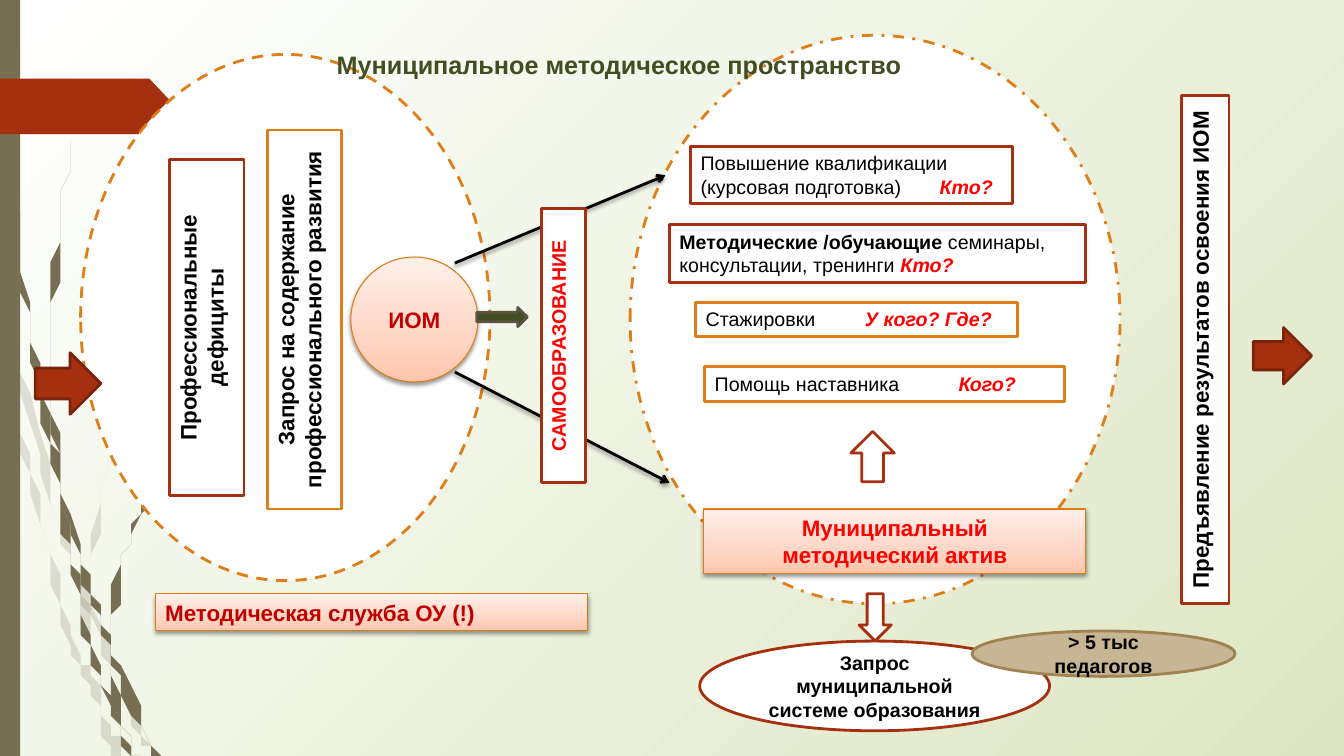
import copy

import lxml.etree
import pptx
import pptx.dml.color
import pptx.enum.dml
import pptx.enum.shapes
import pptx.enum.text
import pptx.oxml
import pptx.oxml.ns
import pptx.util

KIND = pptx.enum.shapes.MSO_SHAPE
DASH = pptx.enum.dml.MSO_LINE
LEFT, CENTER = pptx.enum.text.PP_ALIGN.LEFT, pptx.enum.text.PP_ALIGN.CENTER
TOP, MIDDLE = pptx.enum.text.MSO_ANCHOR.TOP, pptx.enum.text.MSO_ANCHOR.MIDDLE
qn = pptx.oxml.ns.qn


def rgb(code):
    return pptx.dml.color.RGBColor.from_string(code)


def smooth(knots, steps=6):
    """Points of a soft curve through all knots."""
    ends = [knots[0], *knots, knots[-1]]
    curve = []
    for a, b, c, d in zip(ends, ends[1:], ends[2:], ends[3:]):
        for step in range(steps):
            t = step / steps
            curve.append(tuple(
                (2 * q + (r - p) * t + (2 * p - 5 * q + 4 * r - s) * t ** 2
                 + (3 * q - p - 3 * r + s) * t ** 3) / 2
                for p, q, r, s in zip(a, b, c, d)))
    return curve + [knots[-1]]


# Slide: a grid of 75 rows of square cells
deck = pptx.Presentation()
deck.slide_width, deck.slide_height = pptx.util.Inches(13.33), pptx.util.Inches(7.5)
CELL = deck.slide_height / 75
slide = deck.slides.add_slide(deck.slide_layouts[6])
shapes = slide.shapes

RUST, ORANGE, OLIVE, TAUPE = "A53010", "DE7E18", "424D22", "766F54"
WHITE, BLACK, RED, CRIMSON = "FFFFFF", "000000", "FF0000", "C00000"
PEACH = [(0, "FFC6AD"), (0.35, "FFD6C5"), (1, "FFEFE9")]
soft_shadow = pptx.oxml.parse_xml(
    '<a:outerShdw xmlns:a="http://schemas.openxmlformats.org/drawingml/2006/main" '
    'blurRad="39370" dist="20320" dir="5400000" rotWithShape="0">'
    '<a:srgbClr val="000000"><a:alpha val="38000"/></a:srgbClr></a:outerShdw>')

# Background glow from the top left corner
glow = slide.background.fill
glow.gradient()
for stop, (position, code) in zip(glow.gradient_stops, [(0, WHITE), (1, "DDE6C3")]):
    stop.position, stop.color.rgb = position, rgb(code)
glow_xml = slide.element.find(".//" + qn("a:gradFill"))
glow_xml.remove(glow_xml.find(qn("a:lin")))
focus = lxml.etree.SubElement(glow_xml, qn("a:path"), path="circle")
lxml.etree.SubElement(focus, qn("a:fillToRect"), r="100000", b="100000")

# Grass blades: left edge and right edge, each from top to bottom, and opacity
blades = [
    ([(0, 28.2), (1.1, 35), (2.8, 47), (6.5, 62.1), (9.2, 69.3), (11.4, 75)],
     [(0, 29.9), (1.7, 37.6), (3.1, 46.9), (7, 61.9), (9.3, 68.3), (11.9, 75)], 20),
    ([(1.4, 34.5), (1.7, 37.6), (5.8, 52.2), (8.4, 59.9), (12.3, 69.4), (15, 75)],
     [(1.4, 34.5), (6.2, 52), (8.5, 58.6), (12.7, 69.2), (15.5, 75)], 20),
    ([(31.2, 15.3), (26.8, 19.7), (22.8, 24.4), (15.8, 34.8), (10.7, 46.1),
      (8.5, 58.4), (8.7, 64.6), (9.6, 69.2), (11.9, 75)],
     [(31.2, 15.4), (26.8, 19.8), (22.9, 24.5), (16, 34.9), (11, 46.2),
      (8.8, 58.4), (9.1, 64.6), (10.5, 71.1), (12.4, 75)], 20),
    ([(0.3, 0), (0.7, 11), (1.7, 23.3), (3.3, 35.5), (5.6, 47.7), (6.8, 55.7),
      (9.3, 65.9), (11.7, 72.2), (12.7, 75)],
     [(0.4, 0), (0.8, 10.9), (1.9, 23.2), (3.6, 35.5), (5.5, 45.3), (7.2, 55.6),
      (9.8, 65.7), (11.6, 70.6), (13.1, 75)], 100),
    ([(7, 14.1), (5.6, 24.5), (5.2, 34.9), (5.5, 44.9), (6.4, 50.5), (8.8, 59.2),
      (11.1, 65.6), (15.2, 75)],
     [(7, 14.1), (5.8, 24.5), (5.4, 34.9), (6, 47.2), (9.3, 59), (11.3, 64.9),
      (15.7, 75)], 100),
    ([(26, 34.4), (20.4, 40.5), (15.6, 47.4), (12.2, 55.1), (10.6, 63.1),
      (11, 69.1), (13.3, 75)],
     [(26.1, 34.4), (20.5, 40.6), (15.8, 47.6), (12.5, 55.2), (11.1, 63.3),
      (11.1, 65.6), (12.1, 71.6), (13.6, 75)], 100),
]
for left_edge, right_edge, opacity in blades:
    outline = smooth(left_edge) + smooth(right_edge)[::-1]
    builder = shapes.build_freeform(*outline[0], scale=CELL)
    builder.add_line_segments(outline[1:])
    blade = builder.convert_to_shape()
    blade.shadow.inherit = False
    blade.fill.solid()
    blade.fill.fore_color.rgb = rgb(TAUPE)
    blade.line.fill.background()
    tint = blade.element.spPr.find(".//" + qn("a:srgbClr"))
    lxml.etree.SubElement(tint, qn("a:alpha"), val=str(opacity * 1000))

# Text formats
heading = {"size": pptx.util.Pt(16), "bold": True, "color": BLACK}
alert = {**heading, "color": RED}
accent = {**heading, "color": CRIMSON}
small = {**heading, "size": pptx.util.Pt(14)}
small_alert = {**small, "color": RED}
plain = {**small, "bold": False}
question = {**small_alert, "italic": True}
title = {**heading, "size": pptx.util.Pt(18), "color": OLIVE}

# Parts from back to front: kind, place in cells, fill, line, then options
parts = [
    (KIND.RECTANGLE, (0, 0, 2, 75), TAUPE, None, {}),
    (KIND.PENTAGON, (0, 7.8, 17.4, 5.5), RUST, None, {"adjust": 0.47}),
    (KIND.OVAL, (8, 5.4, 40.6, 52.2), WHITE, ORANGE, {"dash": DASH.DASH}),
    (KIND.OVAL, (62.5, 3.5, 48.6, 56.4), WHITE, ORANGE, {"dash": DASH.DASH_DOT}),
    # Individual route and its inputs
    (KIND.RECTANGLE, (16.8, 15.8, 7.4, 33.4), WHITE, RUST,
     {"turned": True, "text": [[("Профессиональные дефициты", heading)]]}),
    (KIND.RECTANGLE, (26.5, 12.9, 7.4, 37.6), WHITE, ORANGE,
     {"turned": True,
      "text": [[("Запрос на содержание профессионального развития", heading)]]}),
    (KIND.OVAL, (34.8, 25.5, 12.6, 12.4), PEACH, "DE7B13",
     {"anchor": MIDDLE, "text": [[("ИОМ", accent)]]}),
    # Forms of support
    (KIND.RECTANGLE, (68.5, 14.5, 31.9, 5.7), WHITE, RUST,
     {"align": LEFT, "tab": 23.7,
      "text": [[("Повышение квалификации (курсовая подготовка)\t", plain),
                ("Кто?", question)]]}),
    (KIND.RECTANGLE, (66.4, 22.3, 41.3, 5.7), WHITE, RUST,
     {"align": LEFT,
      "text": [[("Методические /обучающие ", small),
                ("семинары, консультации, тренинги ", plain), ("Кто?", question)]]}),
    (KIND.RECTANGLE, (69, 30, 31.9, 3.4), WHITE, ORANGE,
     {"align": LEFT, "tab": 15.8,
      "text": [[("Стажировки\t", plain), ("У кого? Где?", question)]]}),
    (KIND.RECTANGLE, (69.9, 36.4, 35.7, 3.4), WHITE, ORANGE,
     {"align": LEFT, "tab": 24.2,
      "text": [[("Помощь наставника\t", plain), ("Кого?", question)]]}),
    # Municipal team and services
    (KIND.UP_ARROW, (84.4, 42.8, 4.3, 5), WHITE, RUST, {}),
    (KIND.RECTANGLE, (69.8, 50.5, 37.9, 6.4), PEACH, "DE7B13",
     {"text": [[("Муниципальный", alert)], [("методический актив", alert)]]}),
    (KIND.DOWN_ARROW, (85.2, 58.9, 3.2, 4.7), WHITE, RUST, {}),
    (KIND.RECTANGLE, (15.4, 58.9, 42.9, 3.7), PEACH, "DE7B13",
     {"align": LEFT, "text": [[("Методическая служба ОУ (!)", accent)]]}),
    # Results and requests
    (KIND.RECTANGLE, (117.2, 9.5, 4.7, 50.4), WHITE, RUST,
     {"turned": True, "text": [[("Предъявление результатов освоения ИОМ", heading)]]}),
    (KIND.RIGHT_ARROW, (3.5, 35, 6.5, 6.1), RUST, "7A240C", {}),
    (KIND.RIGHT_ARROW, (124.3, 32.5, 5.8, 5.6), RUST, "7A240C", {}),
    (KIND.OVAL, (69.4, 63.6, 34.7, 8.9), WHITE, RUST,
     {"anchor": MIDDLE,
      "text": [[("Запрос муниципальной системе образования", small)]]}),
    (KIND.OVAL, (96.4, 62.6, 26.1, 4.5), "C8B594", "9F8351",
     {"anchor": MIDDLE, "text": [[("> 5 тыс педагогов", small)]]}),
    # Paths from the route to support, passing behind self-education
    ("path", (45.1, 26.1, 66, 17.4), None, BLACK, {}),
    ("path", (45.1, 36.9, 66.4, 47.9), None, BLACK, {}),
    (KIND.RECTANGLE, (53.7, 20.7, 4.4, 27.2), WHITE, RUST,
     {"turned": True, "text": [[("САМООБРАЗОВАНИЕ", small_alert)]]}),
    (KIND.RIGHT_ARROW, (47.3, 30.5, 5, 1.9), OLIVE, "59533F", {}),
    ("title", (32.4, 4.4, 65.9, 4), None, None,
     {"align": LEFT, "text": [[("Муниципальное методическое пространство", title)]]}),
]
for kind, cells, fill, line, options in parts:
    place = [round(cell * CELL) for cell in cells]
    if kind == "path":
        path_line = shapes.add_connector(pptx.enum.shapes.MSO_CONNECTOR.STRAIGHT, *place)
        path_line.line.color.rgb = rgb(line)
        path_line.line.width = pptx.util.Pt(2)
        lxml.etree.SubElement(path_line.line._get_or_add_ln(), qn("a:tailEnd"), type="arrow")
        effects = lxml.etree.SubElement(path_line.element.spPr, qn("a:effectLst"))
        effects.append(copy.deepcopy(soft_shadow))
        continue
    if kind == "title":
        part = shapes.add_textbox(*place)
    else:
        part = shapes.add_shape(kind, *place)
        part.shadow.inherit = False
        if fill is PEACH:
            part.fill.gradient()
            part.fill.gradient_angle = 90
            stops = part.element.spPr.find(".//" + qn("a:gsLst"))
            stops.append(copy.deepcopy(stops[-1]))
            for stop, (position, code) in zip(part.fill.gradient_stops, PEACH):
                stop.position, stop.color.rgb = position, rgb(code)
            part.element.spPr.find(qn("a:effectLst")).append(copy.deepcopy(soft_shadow))
        else:
            part.fill.solid()
            part.fill.fore_color.rgb = rgb(fill)
        if line:
            part.line.color.rgb = rgb(line)
            part.line.width = pptx.util.Pt(0.75 if fill is PEACH else 2)
        else:
            part.line.fill.background()
        if "dash" in options:
            part.line.dash_style = options["dash"]
        if "adjust" in options:
            part.adjustments[0] = options["adjust"]

    frame = part.text_frame
    frame.word_wrap = True
    frame.vertical_anchor = options.get("anchor", TOP)
    if options.get("turned"):
        frame._txBody.bodyPr.set("vert", "vert270")
    for row, runs in enumerate(options.get("text", [])):
        paragraph = frame.add_paragraph() if row else frame.paragraphs[0]
        paragraph.alignment = options.get("align", CENTER)
        if "tab" in options:
            tabs = lxml.etree.SubElement(paragraph._p.get_or_add_pPr(), qn("a:tabLst"))
            lxml.etree.SubElement(tabs, qn("a:tab"), algn="l",
                                  pos=str(round(options["tab"] * CELL)))
        for words, formats in runs:
            run = paragraph.add_run()
            run.text = words
            run.font.name = "Arial"
            run.font.color.rgb = rgb(formats["color"])
            for name in formats.keys() - {"color"}:
                setattr(run.font, name, formats[name])

deck.save("out.pptx")
